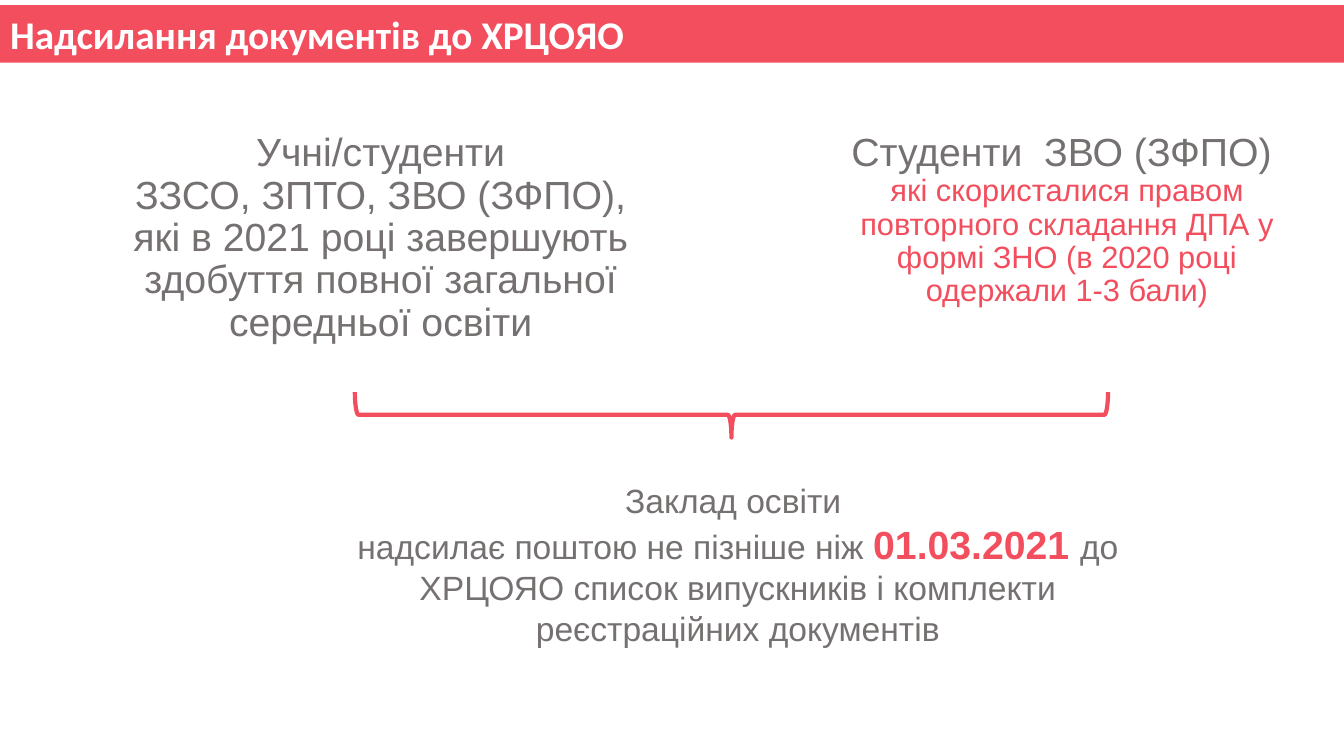
from dataclasses import dataclass

from pptx import Presentation
from pptx import util as u
from pptx.dml.color import RGBColor
from pptx.enum import shapes, text

SLIDE_WIDTH, SLIDE_HEIGHT = u.Inches(13.33), u.Inches(7.5)
CORAL, GREY, WHITE = "F24E5E", "767171", "FFFFFF"


@dataclass(frozen=True)
class Area:
    """A rectangle in percent of the slide's width and height."""
    left: float
    top: float
    width: float
    height: float

    def box(self) -> tuple[int, int, int, int]:
        return (int(SLIDE_WIDTH * self.left / 100), int(SLIDE_HEIGHT * self.top / 100),
                int(SLIDE_WIDTH * self.width / 100), int(SLIDE_HEIGHT * self.height / 100))


@dataclass(frozen=True)
class Phrase:
    wording: str
    size: int
    color: str = GREY
    bold: bool = False


@dataclass(frozen=True)
class Statement:
    area: Area
    paragraphs: list[list[Phrase]]
    spacing: float = 1.0


TITLE_BAND = Area(0, 0.67, 100, 7.6)
BRACE = Area(52.73, 5.07, 3.38, 99.6)
STATEMENTS = [
    Statement(Area(8.93, 16.93, 38.77, 31.33), [
        [Phrase("Учні/студенти", 28)],
        [Phrase("ЗЗСО, ЗПТО, ЗВО (ЗФПО), які в 2021 році завершують "
                "здобуття повної загальної середньої освіти", 28)],
    ], spacing=0.9),
    Statement(Area(61.95, 16.93, 34.88, 38.8), [
        [Phrase("Студенти  ЗВО (ЗФПО) ", 28)],
        [Phrase("які скористалися правом повторного складання ДПА у "
                "формі ЗНО (в 2020 році одержали 1-3 бали)", 22, CORAL)],
    ], spacing=0.9),
    Statement(Area(25.2, 62.8, 59.4, 23.73), [
        [Phrase("Заклад освіти ", 24)],
        [Phrase("надсилає поштою не пізніше ніж ", 24),
         Phrase("01.03.2021 ", 28, CORAL, bold=True),
         Phrase("до ХРЦОЯО список випускників і комплекти "
                "реєстраційних документів", 24)],
    ]),
]


def rgb(code: str) -> RGBColor:
    return RGBColor.from_string(code)


def add_phrase(paragraph, wording: str, *, size: int, color: str,
               bold: bool = False, font: str = "Arial") -> None:
    run = paragraph.add_run()
    run.text = wording
    run.font.name = font
    run.font.size = u.Pt(size)
    run.font.bold = bold
    run.font.color.rgb = rgb(color)


def format_title(title) -> None:
    title.left, title.top, title.width, title.height = TITLE_BAND.box()
    title.fill.solid()
    title.fill.fore_color.rgb = rgb(CORAL)
    frame = title.text_frame
    frame.auto_size = text.MSO_AUTO_SIZE.NONE
    frame.vertical_anchor = text.MSO_ANCHOR.MIDDLE
    heading = frame.paragraphs[0]
    heading.alignment = text.PP_ALIGN.LEFT
    add_phrase(heading, "Надсилання документів до ХРЦОЯО",
               size=28, color=WHITE, bold=True, font="Calibri")


def add_statement(slide, statement: Statement) -> None:
    frame = slide.shapes.add_textbox(*statement.area.box()).text_frame
    frame.word_wrap = True
    for index, phrases in enumerate(statement.paragraphs):
        paragraph = frame.add_paragraph() if index else frame.paragraphs[0]
        paragraph.alignment = text.PP_ALIGN.CENTER
        paragraph.line_spacing = statement.spacing
        for phrase in phrases:
            add_phrase(paragraph, phrase.wording, size=phrase.size,
                       color=phrase.color, bold=phrase.bold)


def add_brace(slide) -> None:
    """Join both groups above to the instruction below."""
    brace = slide.shapes.add_shape(shapes.MSO_SHAPE.RIGHT_BRACE, *BRACE.box())
    brace.rotation = 90
    brace.adjustments[0] = 0.08
    brace.adjustments[1] = 0.5
    brace.shadow.inherit = False
    brace.fill.background()
    brace.line.color.rgb = rgb(CORAL)
    brace.line.width = u.Pt(3)


def main() -> None:
    deck = Presentation()
    deck.slide_width, deck.slide_height = SLIDE_WIDTH, SLIDE_HEIGHT
    slide = deck.slides.add_slide(deck.slide_layouts[5])
    format_title(slide.shapes.title)
    for statement in STATEMENTS:
        add_statement(slide, statement)
    add_brace(slide)
    deck.save("out.pptx")


if __name__ == "__main__":
    main()
